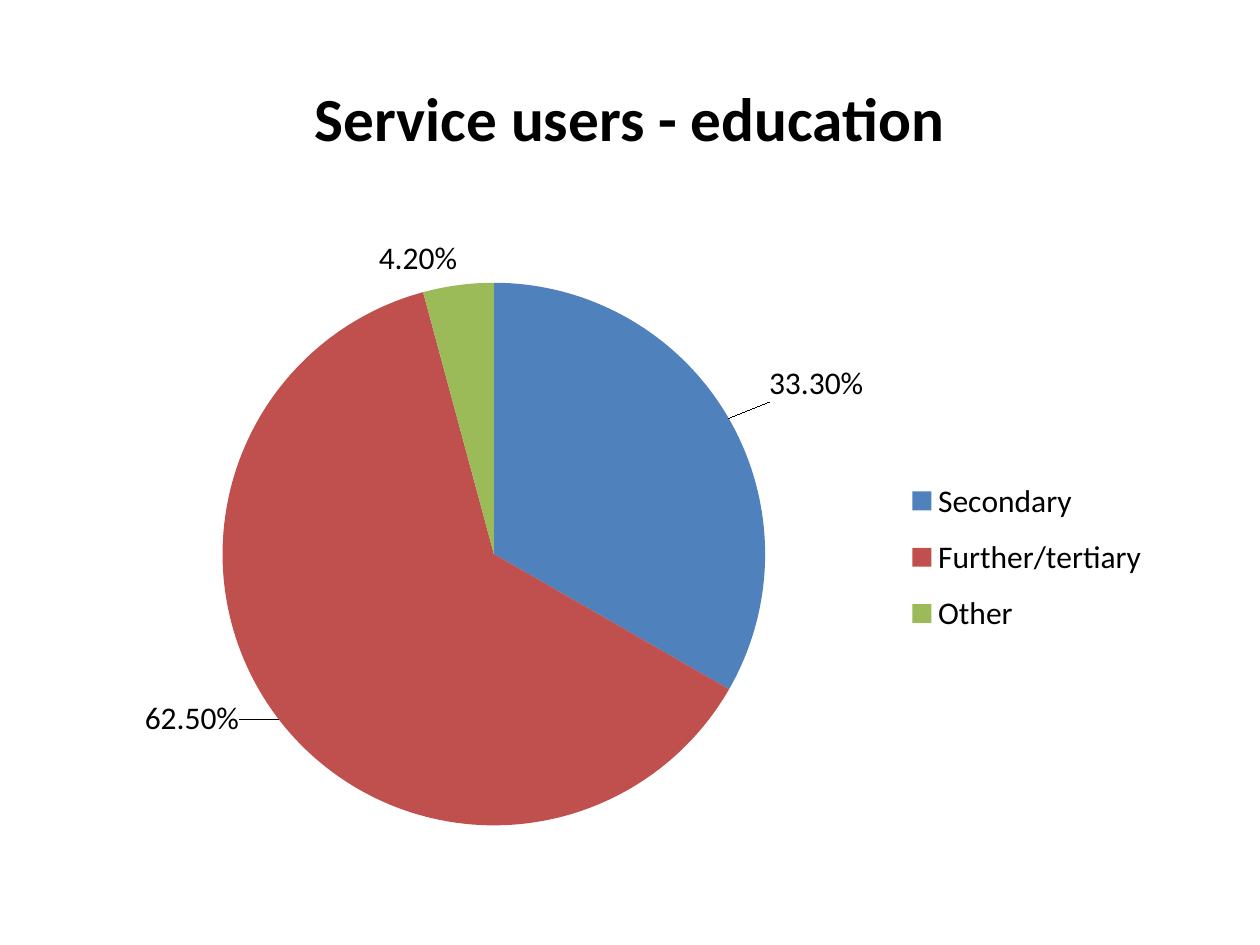
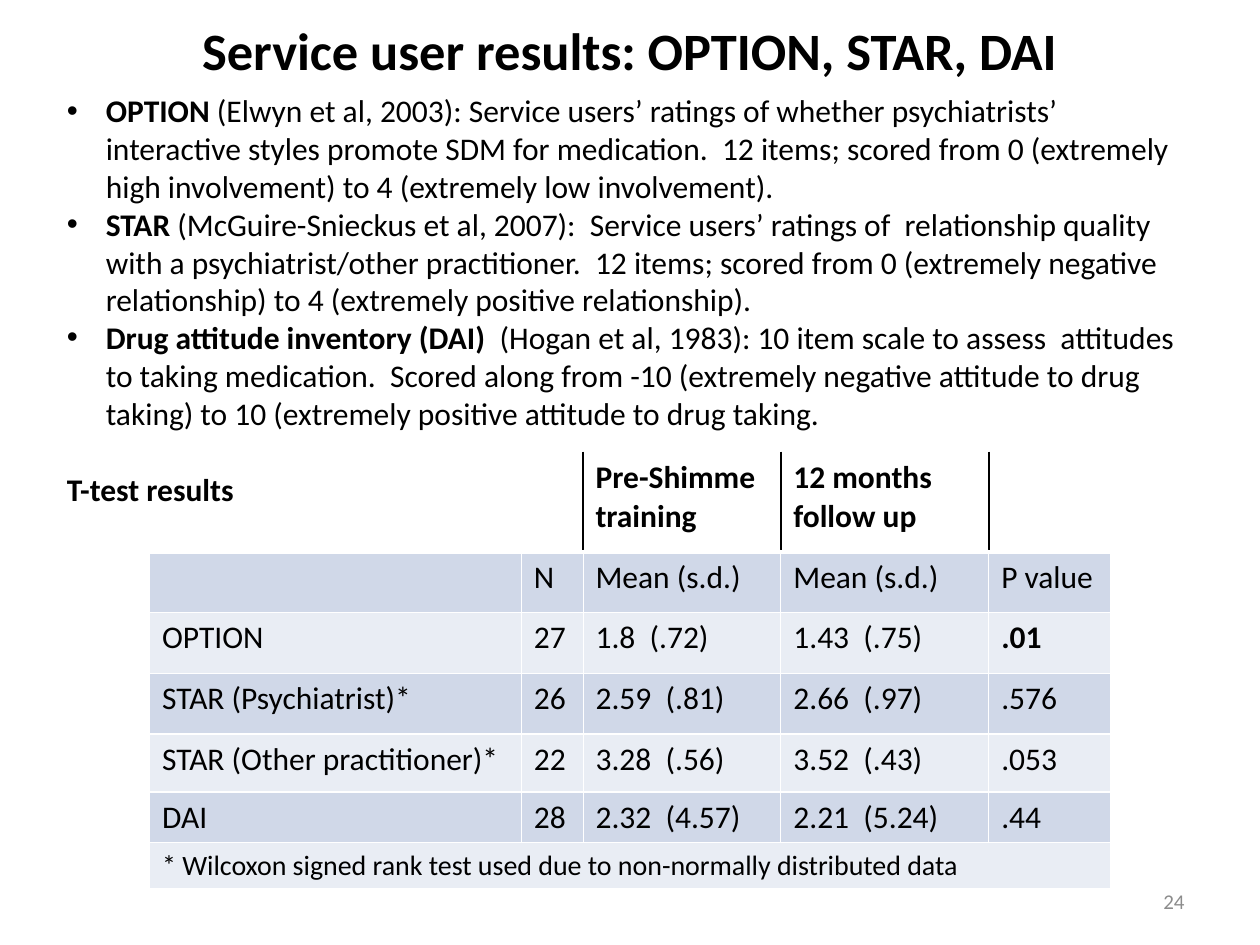
"""Build two slides: a pie of service users' education and a table of results."""
from lxml import etree
from pptx import Presentation
from pptx.chart.data import CategoryChartData
from pptx.dml.color import RGBColor
from pptx.enum.chart import XL_CHART_TYPE, XL_LABEL_POSITION, XL_LEGEND_POSITION
from pptx.enum.text import MSO_ANCHOR, PP_ALIGN
from pptx.oxml import parse_xml
from pptx.oxml.ns import nsdecls, qn
from pptx.util import Inches, Pt

PIE = XL_CHART_TYPE.PIE
OUT = XL_LABEL_POSITION.OUTSIDE_END
RIGHT = XL_LEGEND_POSITION.RIGHT
MID, TOP = MSO_ANCHOR.MIDDLE, MSO_ANCHOR.TOP
LEFT, MIDDLE, END = PP_ALIGN.LEFT, PP_ALIGN.CENTER, PP_ALIGN.RIGHT

FACE = "Calibri"
BLACK, WHITE, GREY = "000000", "FFFFFF", "8C8C8C"
BANDS = ["D0D8E8", "E9EDF4"]
SLICES = ["4F81BD", "C0504D", "9BBB59"]
UNIT = Inches(0.1)

hue = RGBColor.from_string


def write(frame, paras, size, color=BLACK, align=LEFT, anchor=TOP):
    """Fill a text frame with paragraphs made of (text, bold) runs."""
    frame.word_wrap = True
    frame.vertical_anchor = anchor
    for i, runs in enumerate(paras):
        para = frame.add_paragraph() if i else frame.paragraphs[0]
        para.alignment = align
        for words, bold in runs:
            run = para.add_run()
            run.text = words
            for name, value in {"name": FACE, "size": Pt(size), "bold": bold}.items():
                setattr(run.font, name, value)
            run.font.color.rgb = hue(color)


def grid(*cells):
    """Turn grid units of a tenth of an inch into lengths."""
    return [round(cell * UNIT) for cell in cells]


deck = Presentation()
deck.slide_width, deck.slide_height = grid(100, 75)
slides = []
for title, size, place in [
    ("Service users - education", 35, (5, 3, 90, 12.5)),
    ("Service user results: OPTION, STAR, DAI", 30, (5, 1.25, 90, 5.4)),
]:
    slide = deck.slides.add_slide(deck.slide_layouts[6])
    box = slide.shapes.add_textbox(*grid(*place))
    write(box.text_frame, [[(title, True)]], size, align=MIDDLE, anchor=MID)
    slides.append(slide)
first, second = slides

data = CategoryChartData(number_format="0.00%")
data.categories = ["Secondary", "Further/tertiary", "Other"]
data.add_series("Series 1", [0.333, 0.625, 0.042])
chart = first.shapes.add_chart(PIE, *grid(5, 17.5, 90, 49.5), data).chart
chart.has_title = False
chart.has_legend = True
chart.legend.position = RIGHT
chart.legend.include_in_layout = False
for name, value in {"name": FACE, "size": Pt(18)}.items():
    setattr(chart.font, name, value)
chart.font.color.rgb = hue(BLACK)
chart.plots[0].vary_by_categories = True

series = chart.plots[0].series[0]
labels = series.data_labels
for name, value in {"show_value": True, "number_format": "0.00%",
                    "number_format_is_linked": False, "position": OUT}.items():
    setattr(labels, name, value)
for i, color in enumerate(SLICES):
    point = series.points[i]
    point.format.fill.solid()
    point.format.fill.fore_color.rgb = hue(color)
    point.data_label.position = OUT

area = chart._chartSpace.find(".//" + qn("c:plotArea"))
key = chart._chartSpace.find(".//" + qn("c:legend"))
for owner in (area, key):
    for old in owner.findall(qn("c:layout")):
        owner.remove(old)
edge = {"xMode": "edge", "yMode": "edge"}
spots = [
    (area, 0, {"layoutTarget": "inner", **edge, "x": 0.14, "y": 0.1, "w": 0.48, "h": 0.87}),
    (key, 1, {**edge, "x": 0.73, "y": 0.39, "w": 0.24, "h": 0.3}),
]
shifts = [(0.03, -0.02), (-0.03, -0.04)]
for label, (x, y) in zip(area.iter(qn("c:dLbl")), shifts):
    spots.append((label, 1, {"x": x, "y": y}))
for owner, index, values in spots:
    layout = parse_xml(f"<c:layout {nsdecls('c')}><c:manualLayout/></c:layout>")
    for tag, value in values.items():
        etree.SubElement(layout[0], qn("c:" + tag)).set("val", str(value))
    owner.insert(index, layout)

rows = [
    ["", "", "Pre-Shimme training", "12 months follow up", ""],
    ["", "N", "Mean (s.d.)", "Mean (s.d.)", "P value"],
    ["OPTION", "27", "1.8  (.72)", "1.43  (.75)", ".01"],
    ["STAR (Psychiatrist)*", "26", "2.59  (.81)", "2.66  (.97)", ".576"],
    ["STAR (Other practitioner)*", "22", "3.28  (.56)", "3.52  (.43)", ".053"],
    ["DAI", "28", "2.32  (4.57)", "2.21  (5.24)", ".44"],
    ["* Wilcoxon signed rank test used due to non-normally distributed data",
     "", "", "", ""],
]
last = len(rows) - 1
table = second.shapes.add_table(len(rows), 5, *grid(11.87, 35.9, 76.4, 34.7)).table
table.first_row = table.horz_banding = False
for column, width in zip(table.columns, grid(29.5, 4.9, 15.7, 16.5, 9.7)):
    column.width = width
for row, height in zip(table.rows, grid(7.9, 4.8, 4.85, 4.8, 4.6, 4, 3.7)):
    row.height = height
table.cell(last, 0).merge(table.cell(last, 4))
for r, row in enumerate(rows):
    for c, words in enumerate(row):
        cell = table.cell(r, c)
        cell.fill.solid()
        cell.fill.fore_color.rgb = hue(BANDS[(r - 1) % 2] if r else WHITE)
        if words:
            bold = r == 0 or words == ".01"
            write(cell.text_frame, [[(words, bold)]], 16 if r == last else 18)
        else:
            cell.text_frame.paragraphs[0].font.size = Pt(16 if r == last else 18)
        dark = {"L": r == 0 and c > 1, "R": r == 0 and 0 < c < 4}
        props = cell._tc.get_or_add_tcPr()
        for i, side in enumerate("LRTB"):
            black = dark.get(side, False)
            thick = 1.5 if black else 3 if (r, side) in [(0, "B"), (1, "T")] else 1
            if r and (c, side) in [(1, "R"), (2, "L")]:
                thick = 0.25
            props.insert(i, parse_xml(
                f'<a:ln{side} {nsdecls("a")} w="{Pt(thick)}"><a:solidFill>'
                f'<a:srgbClr val="{BLACK if black else WHITE}"/></a:solidFill></a:ln{side}>'))

scales = [
    [("OPTION ", True),
     ("(Elwyn et al, 2003): Service users’ ratings of whether psychiatrists’ "
      "interactive styles promote SDM for medication.  12 items; scored from 0 "
      "(extremely high involvement) to 4 (extremely low involvement).", False)],
    [("STAR ", True),
     ("(McGuire-Snieckus et al, 2007):  Service users’ ratings of  relationship "
      "quality  with a psychiatrist/other practitioner.  12 items; scored from 0 "
      "(extremely negative relationship) to 4 (extremely positive relationship).", False)],
    [("Drug attitude inventory (DAI)  ", True),
     ("(Hogan et al, 1983): 10 item scale to assess  attitudes to taking "
      "medication.  Scored along from -10 (extremely negative attitude to drug "
      "taking) to 10 (extremely positive attitude to drug taking.", False)],
    [("T-test results", True)],
]
body = second.shapes.add_textbox(*grid(4.32, 6.76, 91.3, 34.3)).text_frame
write(body, scales, 18)
dent = Inches(0.31)
for para in body.paragraphs[:-1]:
    props = para._p.get_or_add_pPr()
    props.set("marL", str(dent))
    props.set("indent", str(-dent))
    etree.SubElement(props, qn("a:buFont")).set("typeface", "Arial")
    etree.SubElement(props, qn("a:buChar")).set("char", "•")
body.paragraphs[-1].space_before = Pt(22)

page = second.shapes.add_textbox(*grid(71.7, 69.5, 23.3, 4))
write(page.text_frame, [[("24", False)]], 12, GREY, END, MID)

deck.save("out.pptx")
